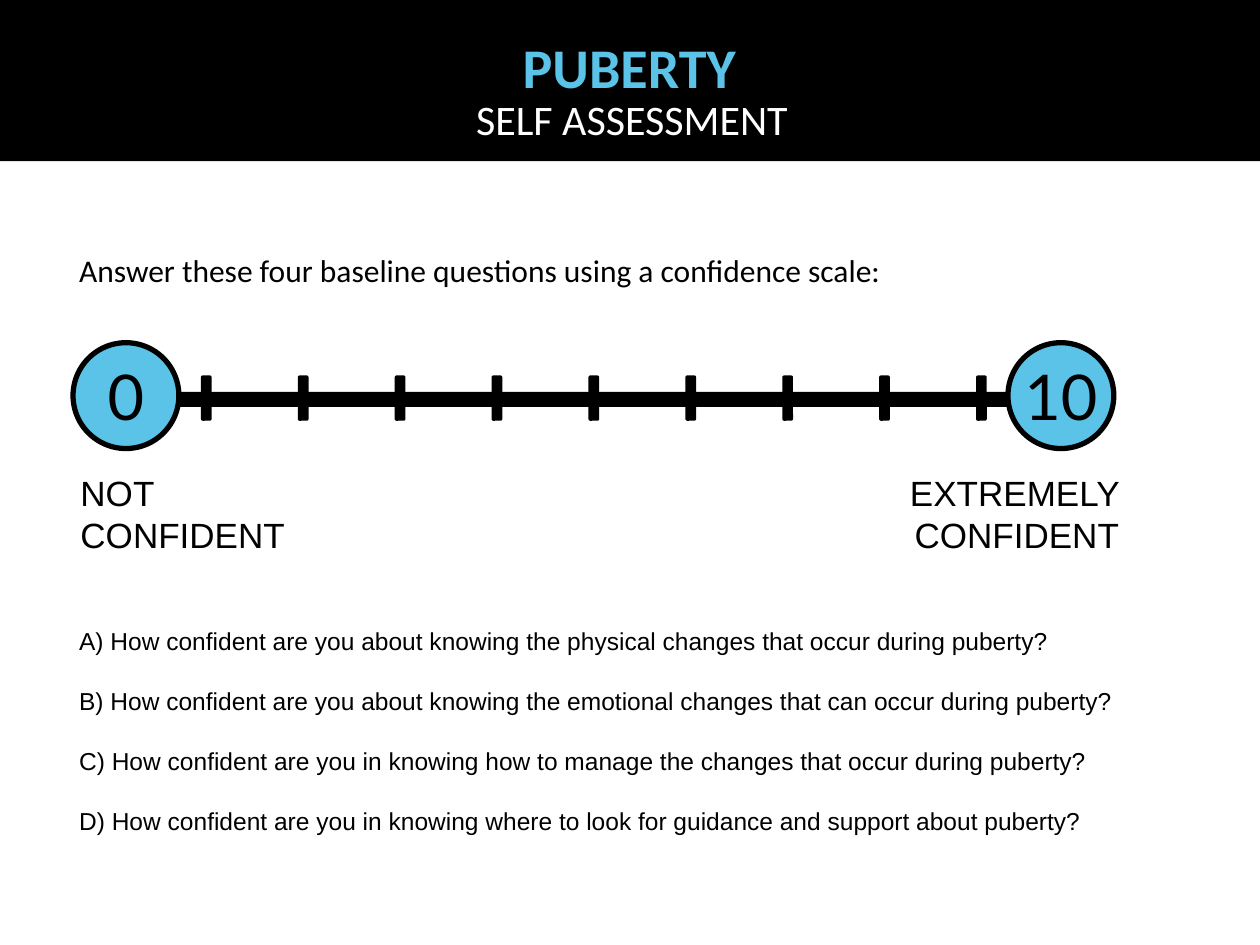
from pptx import Presentation
from pptx.dml.color import RGBColor
from pptx.enum.shapes import MSO_SHAPE
from pptx.enum.text import PP_ALIGN
from pptx.util import Inches, Pt

BLACK, WHITE, BLUE = "000000", "FFFFFF", "5AC3E7"
QUESTIONS = [
    "A) How confident are you about knowing the physical changes that occur during puberty?",
    "B) How confident are you about knowing the emotional changes that can occur during puberty?",
    "C) How confident are you in knowing how to manage the changes that occur during puberty?",
    "D) How confident are you in knowing where to look for guidance and support about puberty?",
]


def rgb(color):
    """Turn a hex string into a colour."""
    return RGBColor.from_string(color)


def write(tf, text, size=18, font="Arial", color=BLACK, bold=False,
          align=PP_ALIGN.LEFT, gap=0):
    """Fill a text frame with one paragraph per line of text."""
    for i, line in enumerate(text.split("\n")):
        p = tf.paragraphs[0] if i == 0 else tf.add_paragraph()
        p.alignment = align
        p.space_before = Pt(gap if i else 0)
        r = p.add_run()
        r.text = line
        r.font.size, r.font.name, r.font.bold = Pt(size), font, bold
        r.font.color.rgb = rgb(color)


class Deck:
    """Draw on a grid of 100 columns by 75 rows."""

    def __init__(self):
        """Start a presentation with one blank slide."""
        self.prs = Presentation()
        self.prs.slide_width, self.prs.slide_height = Inches(10), Inches(7.5)
        self.col, self.row = self.prs.slide_width / 100, self.prs.slide_height / 75
        self.s = self.prs.slides.add_slide(self.prs.slide_layouts[6])

    def box(self, x, y, w, h):
        """Convert columns and rows to lengths."""
        return (round(x * self.col), round(y * self.row),
                round(w * self.col), round(h * self.row))

    def shape(self, kind, x, y, w, h, fill=BLACK, line=None):
        """Add a filled preset shape."""
        sp = self.s.shapes.add_shape(kind, *self.box(x, y, w, h))
        sp.shadow.inherit = False
        sp.fill.solid()
        sp.fill.fore_color.rgb = rgb(fill)
        if line:
            sp.line.color.rgb, sp.line.width = rgb(BLACK), Pt(line)
        else:
            sp.line.fill.background()

    def text(self, text, x, y, w, h, wrap=True, **style):
        """Add a text box."""
        tf = self.s.shapes.add_textbox(*self.box(x, y, w, h)).text_frame
        tf.word_wrap = wrap
        write(tf, text, **style)


def main():
    """Build the self assessment slide."""
    deck = Deck()
    deck.shape(MSO_SHAPE.RECTANGLE, 0, 0, 100, 12.8)
    deck.text("PUBERTY", 40.5, 2.1, 19.1, 6.4, wrap=False,
              size=32, font="Calibri", color=BLUE, bold=True)
    deck.text("SELF ASSESSMENT", 36.8, 6.9, 27, 5, wrap=False,
              size=24, font="Calibri", color=WHITE)
    deck.text("Answer these four baseline questions using a confidence scale:",
              5.3, 19.4, 90, 3.1, font="Calibri")

    deck.shape(MSO_SHAPE.RECTANGLE, 12.7, 31.1, 69.7, 1.2)
    for i in range(9):
        deck.shape(MSO_SHAPE.ROUNDED_RECTANGLE, 15.95 + 7.69 * i, 29.8, 0.85, 3.6)
    for number, x in (("0", 5.8), ("10", 80)):
        deck.shape(MSO_SHAPE.OVAL, x, 27.2, 8.4, 8.4, fill=BLUE, line=3)
        deck.text(number, x - 0.45, 27.85, 9.3, 7.1,
                  size=36, font="Lato", align=PP_ALIGN.CENTER)
    deck.text("NOT CONFIDENT", 5.4, 36.9, 20.2, 7.7, size=20)
    deck.text("EXTREMELY CONFIDENT", 66, 36.9, 23.8, 7.7,
              size=20, align=PP_ALIGN.RIGHT)

    deck.text("\n".join(QUESTIONS), 5.3, 49.2, 90, 17.5, size=14, gap=17.4)
    deck.prs.save("out.pptx")


if __name__ == "__main__":
    main()
